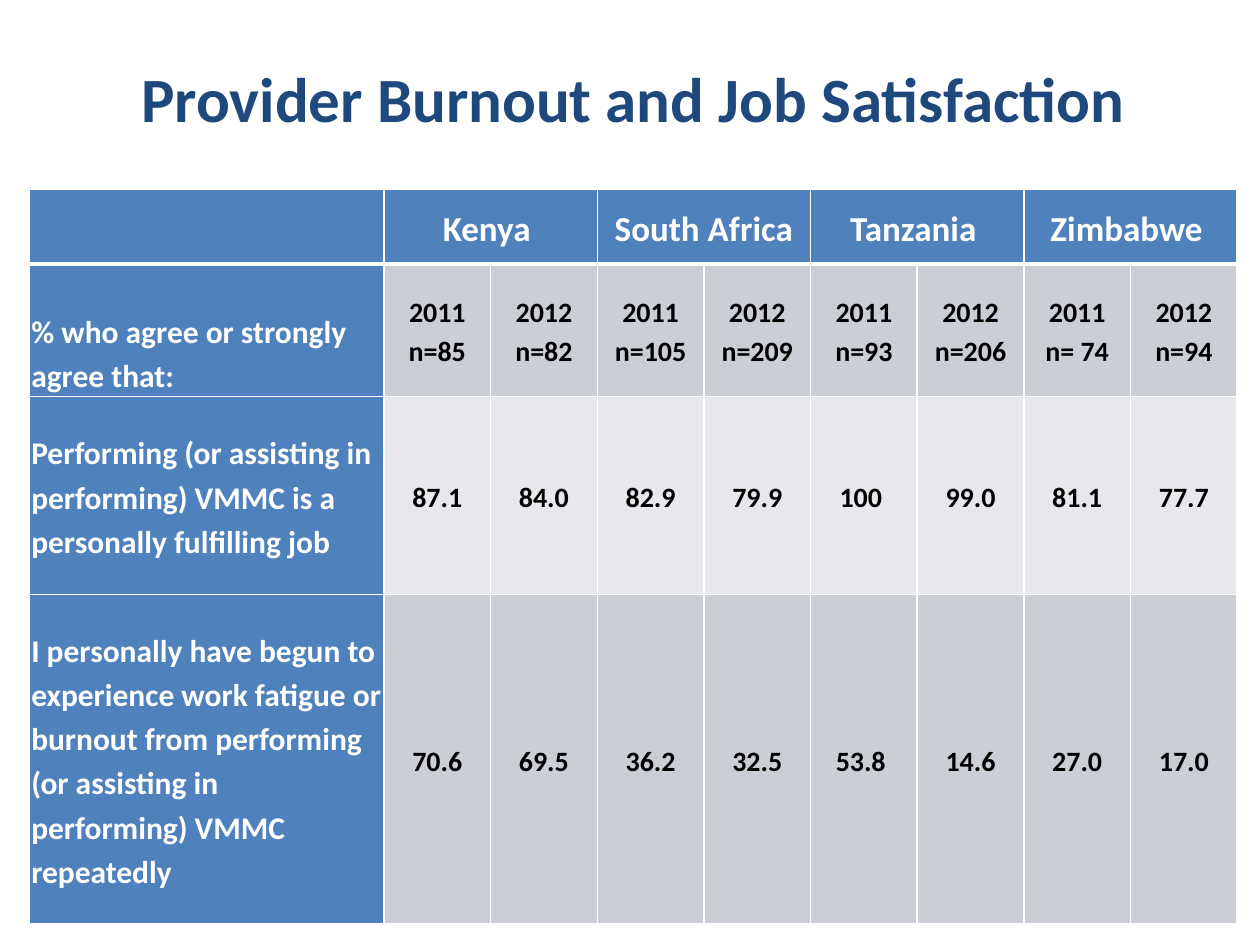
from dataclasses import dataclass

from lxml import etree
from pptx import Presentation
from pptx.dml.color import RGBColor
from pptx.enum.text import MSO_ANCHOR, PP_ALIGN
from pptx.oxml.ns import qn
from pptx.util import Cm, Pt

LEFT, CENTER = PP_ALIGN.LEFT, PP_ALIGN.CENTER
TOP, MIDDLE, BOTTOM = MSO_ANCHOR.TOP, MSO_ANCHOR.MIDDLE, MSO_ANCHOR.BOTTOM
TITLE_ONLY = 5


@dataclass(frozen=True)
class Theme:
    font: str = "Calibri"
    title_color: str = "1F497D"
    header_fill: str = "4F81BD"
    dark_band: str = "CCCED5"
    light_band: str = "E7E8EB"
    white: str = "FFFFFF"
    black: str = "000000"
    title_size: int = 36
    country_size: int = 20
    statement_size: int = 18
    value_size: int = 16
    thin_rule: int = 1
    thick_rule: int = 3


@dataclass(frozen=True)
class Country:
    name: str
    samples: tuple[str, str]


@dataclass(frozen=True)
class ResultRow:
    statement: str
    values: tuple[str, ...]
    band: str
    anchor: MSO_ANCHOR = MIDDLE


THEME = Theme()
YEARS = ("2011", "2012")
# Some labels end in a no-break space, which is part of their centring.
COUNTRIES = (
    Country("Kenya ", ("n=85", "n=82")),
    Country("South Africa", ("n=105", "n=209")),
    Country("Tanzania ", ("n=93", "n=206")),
    Country("Zimbabwe ", ("n= 74", "n=94")),
)
SAMPLE_LABELS = tuple(
    f"{year}\n{sample}"
    for country in COUNTRIES
    for year, sample in zip(YEARS, country.samples)
)
RESULTS = (
    ResultRow("% who agree or strongly agree that:", SAMPLE_LABELS,
              THEME.dark_band, BOTTOM),
    ResultRow("Performing (or assisting in performing) VMMC is a personally fulfilling job",
              ("87.1", "84.0", "82.9", "79.9", "100 ", "99.0", "81.1", "77.7"),
              THEME.light_band),
    ResultRow("I personally have begun to experience work fatigue or burnout from "
              "performing (or assisting in performing) VMMC repeatedly",
              ("70.6", "69.5", "36.2", "32.5", "53.8 ", "14.6", "27.0", "17.0"),
              THEME.dark_band),
)

CONTENT_LEFT, CONTENT_WIDTH = Cm(0.58), Cm(24.36)
TABLE_TOP = Cm(3.82)
STATEMENT_WIDTH, VALUE_WIDTH = Cm(7.16), Cm(2.15)
ROW_HEIGHTS = (Cm(1.5), Cm(2.67), Cm(3.99), Cm(6.65))
CELL_MARGIN = Cm(0.05)


def write_text(frame, text: str, *, size: int, color: str, align=CENTER,
               line_spacing: float = 1.0) -> None:
    """Fill a text frame, one paragraph for each line of text."""
    frame.word_wrap = True
    frame.text = text
    for paragraph in frame.paragraphs:
        paragraph.alignment = align
        paragraph.line_spacing = line_spacing
        paragraph.space_before = Pt(0)
        font = paragraph.runs[0].font
        font.name, font.size, font.bold = THEME.font, Pt(size), True
        font.color.rgb = RGBColor.from_string(color)


def style_cell(cell, fill: str, *, top: int, bottom: int) -> None:
    """Draw the white cell borders, with widths in points, then the fill."""
    properties = cell._tc.get_or_add_tcPr()
    thin = THEME.thin_rule
    for side, width in (("L", thin), ("R", thin), ("T", top), ("B", bottom)):
        border = etree.SubElement(properties, qn(f"a:ln{side}"), w=str(Pt(width)))
        solid = etree.SubElement(border, qn("a:solidFill"))
        etree.SubElement(solid, qn("a:srgbClr"), val=THEME.white)
    cell.fill.solid()
    cell.fill.fore_color.rgb = RGBColor.from_string(fill)


def write_cell(cell, text: str, *, size: int, color: str, align=CENTER,
               anchor=MIDDLE) -> None:
    cell.margin_left = cell.margin_right = CELL_MARGIN
    cell.margin_top = cell.margin_bottom = 0
    cell.vertical_anchor = anchor
    write_text(cell.text_frame, text, size=size, color=color, align=align,
               line_spacing=1.15)


def add_title(slide, text: str) -> None:
    title = slide.shapes.title
    title.left, title.top = CONTENT_LEFT, Cm(1.07)
    title.width, title.height = CONTENT_WIDTH, Cm(1.47)
    title.text_frame.vertical_anchor = TOP
    write_text(title.text_frame, text, size=THEME.title_size, color=THEME.title_color)


def add_results_table(slide) -> None:
    value_count = len(SAMPLE_LABELS)
    table = slide.shapes.add_table(
        len(ROW_HEIGHTS), value_count + 1, CONTENT_LEFT, TABLE_TOP,
        CONTENT_WIDTH, sum(ROW_HEIGHTS)).table
    table.first_row = table.horz_banding = False
    for index, column in enumerate(table.columns):
        column.width = VALUE_WIDTH if index else STATEMENT_WIDTH
    for row, height in zip(table.rows, ROW_HEIGHTS):
        row.height = height

    for cell in table.rows[0].cells:
        style_cell(cell, THEME.header_fill, top=THEME.thin_rule, bottom=THEME.thick_rule)
    for index, country in enumerate(COUNTRIES):
        first = 1 + index * len(YEARS)
        header = table.cell(0, first)
        header.merge(table.cell(0, first + len(YEARS) - 1))
        write_cell(header, country.name, size=THEME.country_size, color=THEME.white)

    for row_index, result in enumerate(RESULTS, start=1):
        top = THEME.thick_rule if row_index == 1 else THEME.thin_rule
        statement, *value_cells = table.rows[row_index].cells
        style_cell(statement, THEME.header_fill, top=top, bottom=THEME.thin_rule)
        write_cell(statement, result.statement, size=THEME.statement_size,
                   color=THEME.white, align=LEFT, anchor=result.anchor)
        for cell, value in zip(value_cells, result.values):
            style_cell(cell, result.band, top=top, bottom=THEME.thin_rule)
            write_cell(cell, value, size=THEME.value_size, color=THEME.black)


def main() -> None:
    presentation = Presentation()
    presentation.slide_width, presentation.slide_height = Cm(25.4), Cm(19.05)
    slide = presentation.slides.add_slide(presentation.slide_layouts[TITLE_ONLY])
    add_title(slide, "Provider Burnout and Job Satisfaction")
    add_results_table(slide)
    presentation.save("out.pptx")


if __name__ == "__main__":
    main()
